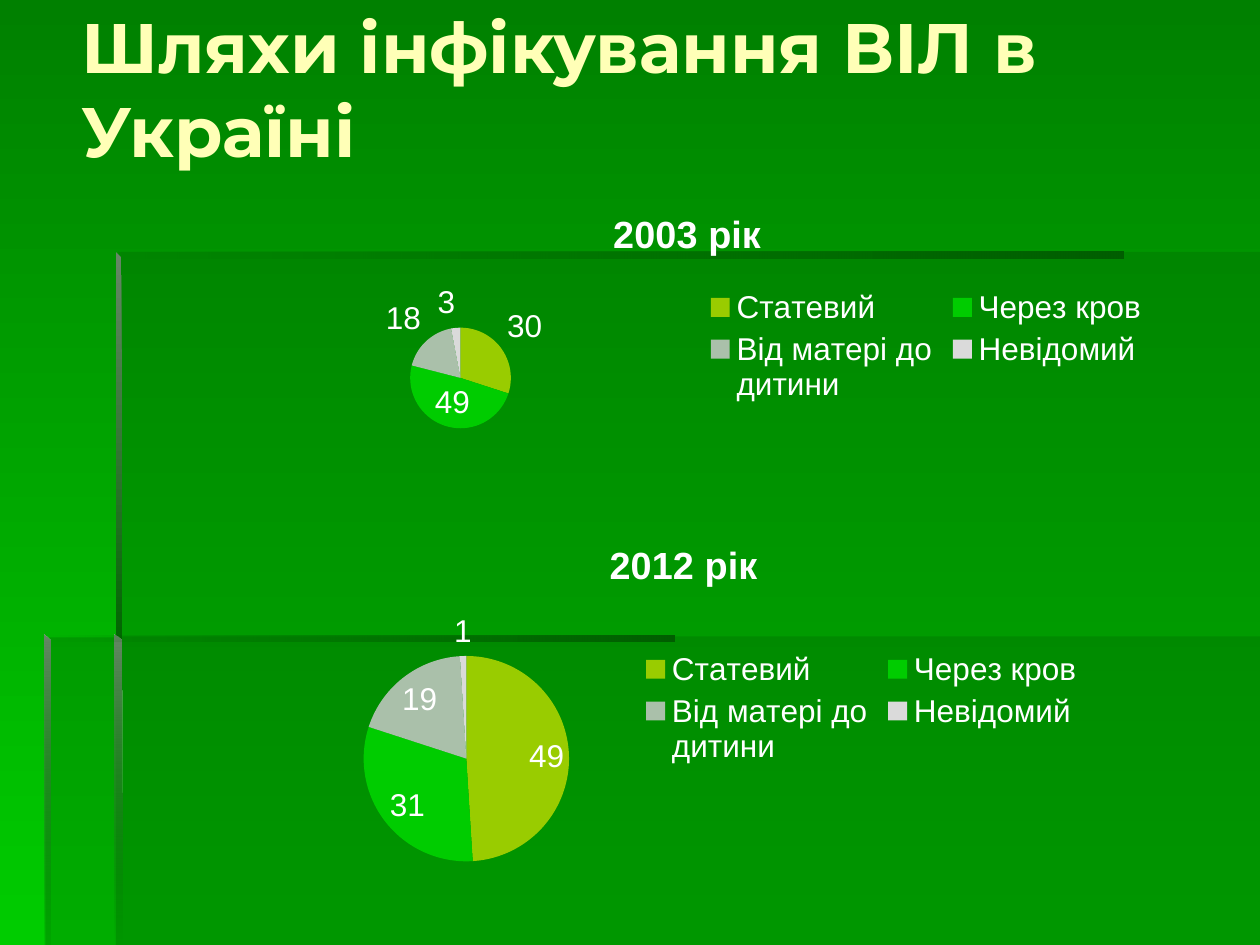
"""Build a slide with two pie charts of HIV infection routes in Ukraine."""
import pptx
import pptx.chart.data
import pptx.dml.color
import pptx.enum.chart
import pptx.enum.text
import pptx.oxml
import pptx.oxml.ns
import pptx.util

Inches = pptx.util.Inches
COLORS = {
    "top": "008000", "bottom": "00CC00", "panel": "006600", "shade": "005E00",
    "edge": "668666", "title": "FFFFB7", "text": "FFFFFF",
    "sexual": "99CC00", "blood": "00CC00", "mother": "AAC0AA", "unknown": "DADADA",
}
TITLE = "Шляхи інфікування ВІЛ в Україні"
ROUTES = [("Статевий", "sexual"), ("Через кров", "blood"),
          ("Від матері до дитини", "mother"), ("Невідомий", "unknown")]
CHARTS = [
    {"name": "2003 рік", "values": (30, 49, 18, 3), "box": (1.75, 1.52, 7.47, 2.35),
     "title": (0.41, 0.04), "plot": (0.2, 0.46, 0.11, 0.34), "legend": (0.51, 0.31)},
    {"name": "2012 рік", "values": (49, 31, 19, 1), "box": (2.16, 4.12, 6.56, 2.86),
     "title": (0.4, 0.04), "plot": (0.11, 0.38, 0.25, 0.57), "legend": (0.44, 0.35)},
]
PANEL = [("panel", 30)]
ACROSS = [("panel", 0), ("shade", 100)]
DOWN = [("edge", 100), ("panel", 100)]
FRAME = [
    ([(0.92, 5.05), (0.92, 7.5), (10, 7.5), (10, 5.05)], PANEL, 0),
    ([(0.94, 5.06), (0.36, 5.06), (0.36, 7.5), (10, 7.5), (10, 2), (0.94, 2)], PANEL, 0),
    ([(0.92, 2), (0.92, 2.05), (8.92, 2.05), (8.92, 2)], ACROSS, 0),
    ([(0.92, 2), (0.92, 5.1), (0.97, 5.1), (0.96, 2.04)], DOWN, 270),
    ([(0.91, 7.5), (0.97, 7.5), (0.96, 5.08), (0.91, 5.04)], [("edge", 100), ("panel", 0)], 270),
    ([(0.35, 5.04), (0.35, 5.09), (5.35, 5.09), (5.35, 5.04)], ACROSS, 0),
    ([(0.35, 5.04), (0.35, 7.5), (0.4, 7.5), (0.4, 5.09)], [("edge", 100), ("panel", 10)], 270),
]


def rgb(name):
    return pptx.dml.color.RGBColor.from_string(COLORS[name])


def set_font(font, color="text", **values):
    values = {"name": "Arial", "size": pptx.util.Pt(18), "bold": False, **values}
    for key, value in values.items():
        setattr(font, key, value)
    font.color.rgb = rgb(color)


def set_gradient(fill, names, angle):
    fill.gradient()
    fill.gradient_angle = angle
    for stop, name in zip(fill.gradient_stops, names):
        stop.color.rgb = rgb(name)


def add_panel(page, points, stops, angle):
    corners = [(Inches(x), Inches(y)) for x, y in points]
    builder = page.shapes.build_freeform(*corners[0])
    builder.add_line_segments(corners[1:], close=True)
    panel = builder.convert_to_shape()
    panel.shadow.inherit = False
    panel.line.fill.background()
    if len(stops) == 1:
        panel.fill.solid()
        panel.fill.fore_color.rgb = rgb(stops[0][0])
    else:
        set_gradient(panel.fill, [name for name, _ in stops], angle)
    tints = panel._element.spPr.iter(pptx.oxml.ns.qn("a:srgbClr"))
    for tint, (_, opacity) in zip(list(tints), stops):
        alpha = pptx.oxml.parse_xml(
            f'<a:alpha {pptx.oxml.ns.nsdecls("a")} val="{opacity * 1000}"/>')
        tint.append(alpha)


def set_layout(element, position, inner=False):
    target = '<c:layoutTarget val="inner"/>' if inner else ""
    modes = "".join(f'<c:{side}Mode val="edge"/>' for side in "xy")
    sizes = "".join(f'<c:{side} val="{value}"/>' for side, value in zip("xywh", position))
    layout = pptx.oxml.parse_xml(
        f'<c:layout {pptx.oxml.ns.nsdecls("c")}><c:manualLayout>'
        f'{target}{modes}{sizes}</c:manualLayout></c:layout>')
    for old in element.findall(pptx.oxml.ns.qn("c:layout")):
        element.remove(old)
    names = {pptx.oxml.ns.qn(name) for name in ("c:tx", "c:legendPos")}
    element.insert(sum(child.tag in names for child in element), layout)


def add_pie(page, item):
    data = pptx.chart.data.CategoryChartData()
    data.categories = [route for route, _ in ROUTES]
    data.add_series(item["name"], item["values"])
    chart = page.shapes.add_chart(
        pptx.enum.chart.XL_CHART_TYPE.PIE, *map(Inches, item["box"]), data).chart
    set_font(chart.font)
    chart.has_title = True
    heading = chart.chart_title.text_frame
    heading.text = item["name"]
    set_font(heading.paragraphs[0].runs[0].font, size=pptx.util.Pt(21.6), bold=True)
    chart.has_legend = True
    chart.legend.position = pptx.enum.chart.XL_LEGEND_POSITION.RIGHT
    chart.legend.include_in_layout = False
    set_font(chart.legend.font)
    plot = chart.plots[0]
    plot.vary_by_categories = True
    for index, (_, color) in enumerate(ROUTES):
        point = plot.series[0].points[index]
        point.format.fill.solid()
        point.format.fill.fore_color.rgb = rgb(color)
        point.format.line.fill.background()
        set_font(point.data_label.font)
        point.data_label.position = pptx.enum.chart.XL_LABEL_POSITION.BEST_FIT
    set_layout(chart.chart_title._element, item["title"])
    set_layout(chart.legend._element, item["legend"])
    set_layout(chart._chartSpace.chart.plotArea, item["plot"], inner=True)


def main():
    deck = pptx.Presentation()
    deck.slide_width, deck.slide_height = Inches(10), Inches(7.5)
    page = deck.slides.add_slide(deck.slide_layouts[6])
    set_gradient(page.background.fill, ("top", "bottom"), 270)
    for points, stops, angle in FRAME:
        add_panel(page, points, stops, angle)
    box = page.shapes.add_textbox(*map(Inches, (0.55, 0, 8.94, 1.39)))
    box.text_frame.word_wrap = True
    box.text_frame.vertical_anchor = pptx.enum.text.MSO_ANCHOR.MIDDLE
    span = box.text_frame.paragraphs[0].add_run()
    span.text = TITLE
    set_font(span.font, "title", name="Montserrat", size=pptx.util.Pt(40), bold=True)
    for item in CHARTS:
        add_pie(page, item)
    deck.save("out.pptx")


if __name__ == "__main__":
    main()
